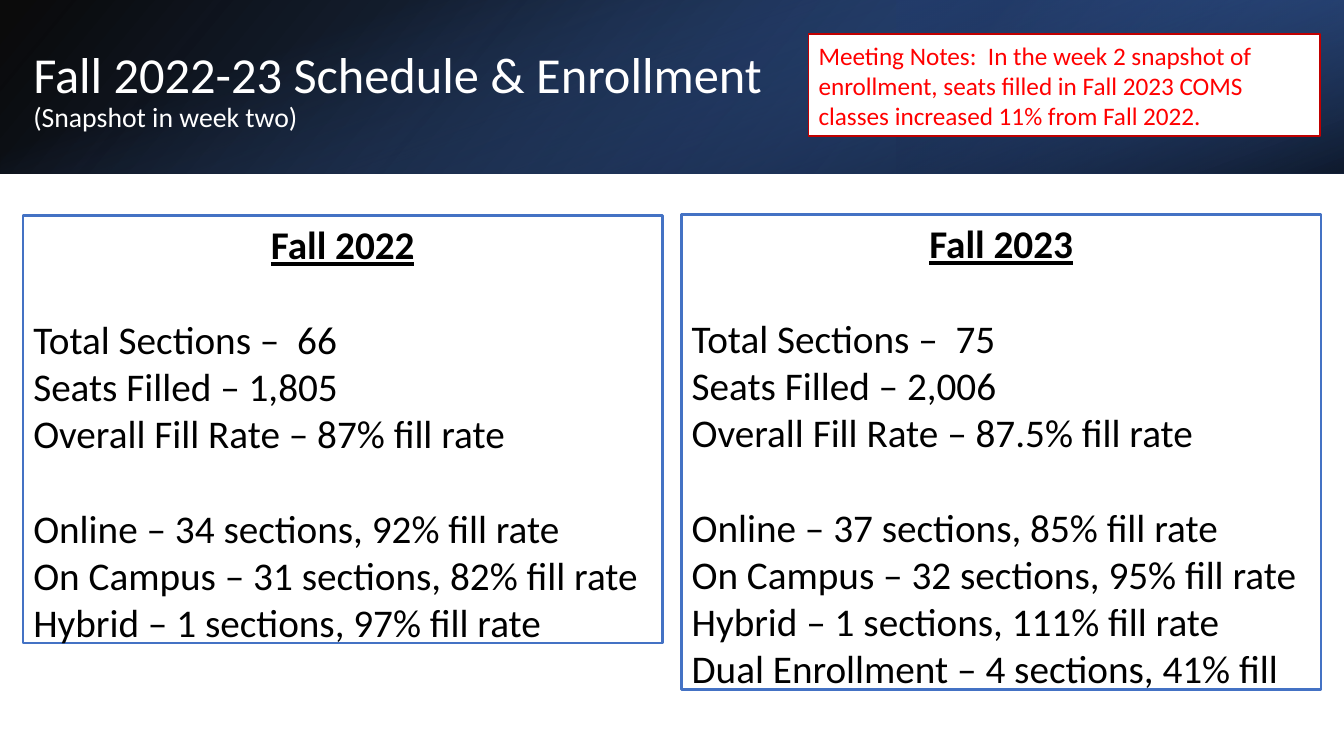
from pptx import Presentation
from pptx.dml.color import RGBColor as RGB
from pptx.enum.shapes import MSO_SHAPE as SHAPE
from pptx.enum.text import MSO_ANCHOR as ANCHOR, MSO_AUTO_SIZE as FIT, PP_ALIGN as ALIGN
from pptx.oxml import parse_xml
from pptx.oxml.ns import nsdecls, qn
from pptx.util import Inches, Pt
from lxml.etree import SubElement

COLORS = {"black": "000000", "white": "FFFFFF", "navy": "203864", "deep": "2F5597",
          "blue": "4472C4", "dark_red": "C00000", "red": "FF0000"}
WIDTH, BANNER = 13.33, 1.72


def format_run(run, color, **values):
    run.font.color.rgb = RGB.from_string(COLORS[color])
    for name, value in {"name": "Calibri", **values}.items():
        setattr(run.font, name, value)


def outline(shape, color, width):
    shape.line.color.rgb = RGB.from_string(COLORS[color])
    shape.line.width = Pt(width)


prs = Presentation()
prs.slide_width, prs.slide_height = Inches(WIDTH), Inches(7.5)
slide = prs.slides.add_slide(prs.slide_layouts[3])
title, fall_2022, fall_2023 = slide.placeholders

# Banner: three gradient layers, behind the placeholders
# (left, top, width, height), rotation, flipped, angle, (position, color, opacity) stops
middle = (WIDTH - BANNER) / 2
layers = [
    ((0, 0, WIDTH, BANNER), 0, True, 140, [(0, "black", 96), (100, "deep", 100)]),
    ((8.89, 0, 4.44, BANNER), 180, True, 320, [(19, "navy", 68), (100, "blue", 79)]),
    ((middle, -middle, BANNER, WIDTH), 90, False, 340, [(23, "blue", 0), (99, "black", 74)]),
]
for depth, (place, rotation, flipped, angle, stops) in enumerate(layers):
    layer = slide.shapes.add_shape(SHAPE.RECTANGLE, *map(Inches, place))
    layer.shadow.inherit = False
    layer.rotation = rotation
    layer.line.fill.background()
    layer.fill.background()
    stop_xml = "".join(
        f'<a:gs pos="{position * 1000}"><a:srgbClr val="{COLORS[color]}">'
        f'<a:alpha val="{opacity * 1000}"/></a:srgbClr></a:gs>'
        for position, color, opacity in stops)
    gradient = parse_xml(
        f'<a:gradFill {nsdecls("a")} rotWithShape="1"><a:gsLst>{stop_xml}</a:gsLst>'
        f'<a:lin ang="{angle * 60000}" scaled="0"/></a:gradFill>')
    properties = layer._element.spPr
    properties.replace(properties.find(qn("a:noFill")), gradient)
    if flipped:
        properties.find(qn("a:xfrm")).set("flipH", "1")
    slide.shapes._spTree.insert(2 + depth, layer._element)

# Title
title.left, title.top, title.width, title.height = map(Inches, (0.23, 0.43, 7.56, 0.96))
title.text_frame.auto_size = FIT.NONE
title.text_frame.vertical_anchor = ANCHOR.MIDDLE
heading = title.text_frame.paragraphs[0]
heading.alignment, heading.line_spacing = ALIGN.LEFT, 0.9
for text, size in [("Fall 2022-23 Schedule & Enrollment", 36), ("(Snapshot in week two)", 19.8)]:
    if heading.runs:
        heading.add_line_break()
    run = heading.add_run()
    run.text = text
    format_run(run, "white", size=Pt(size))

# Semester lists: each inner list is a group set off by a gap of one line
semesters = [
    (fall_2022, (0.23, 2.14, 6.34, 4.34), [
        ["Fall 2022"],
        ["Total Sections –  66", "Seats Filled – 1,805", "Overall Fill Rate – 87% fill rate"],
        ["Online – 34 sections, 92% fill rate", "On Campus – 31 sections, 82% fill rate",
         "Hybrid – 1 sections, 97% fill rate"]]),
    (fall_2023, (6.76, 2.13, 6.34, 4.81), [
        ["Fall 2023"],
        ["Total Sections –  75", "Seats Filled – 2,006", "Overall Fill Rate – 87.5% fill rate"],
        ["Online – 37 sections, 85% fill rate", "On Campus – 32 sections, 95% fill rate",
         "Hybrid – 1 sections, 111% fill rate", "Dual Enrollment – 4 sections, 41% fill"]]),
]
for semester, place, groups in semesters:
    semester.left, semester.top, semester.width, semester.height = map(Inches, place)
    outline(semester, "blue", 1.75)
    frame = semester.text_frame
    frame.auto_size = FIT.SHAPE_TO_FIT_TEXT
    entry = frame.paragraphs[0]
    for g, group in enumerate(groups):
        for i, text in enumerate(group):
            is_heading = g == 0
            if not is_heading:
                entry = frame.add_paragraph()
            entry.alignment = ALIGN.CENTER if is_heading else ALIGN.LEFT
            entry.space_before = Pt(34 if g and i == 0 else 0)
            indents = entry._p.get_or_add_pPr()
            indents.set("marL", "0")
            indents.set("indent", "0")
            SubElement(indents, qn("a:buNone"))
            run = entry.add_run()
            run.text = text
            format_run(run, "black", size=Pt(28), bold=is_heading, underline=is_heading)

# Meeting notes
notes = slide.shapes.add_shape(SHAPE.RECTANGLE, *map(Inches, (8.02, 0.34, 5.07, 1.01)))
notes.shadow.inherit = False
notes.fill.solid()
notes.fill.fore_color.rgb = RGB.from_string(COLORS["white"])
outline(notes, "dark_red", 1.25)
notes.text_frame.word_wrap = True
notes.text_frame.auto_size = FIT.SHAPE_TO_FIT_TEXT
remark = notes.text_frame.paragraphs[0]
remark.alignment = ALIGN.LEFT
run = remark.add_run()
run.text = ("Meeting Notes:  In the week 2 snapshot of enrollment, seats filled in "
            "Fall 2023 COMS classes increased 11% from Fall 2022.")
format_run(run, "red", size=Pt(18))

prs.save("out.pptx")
